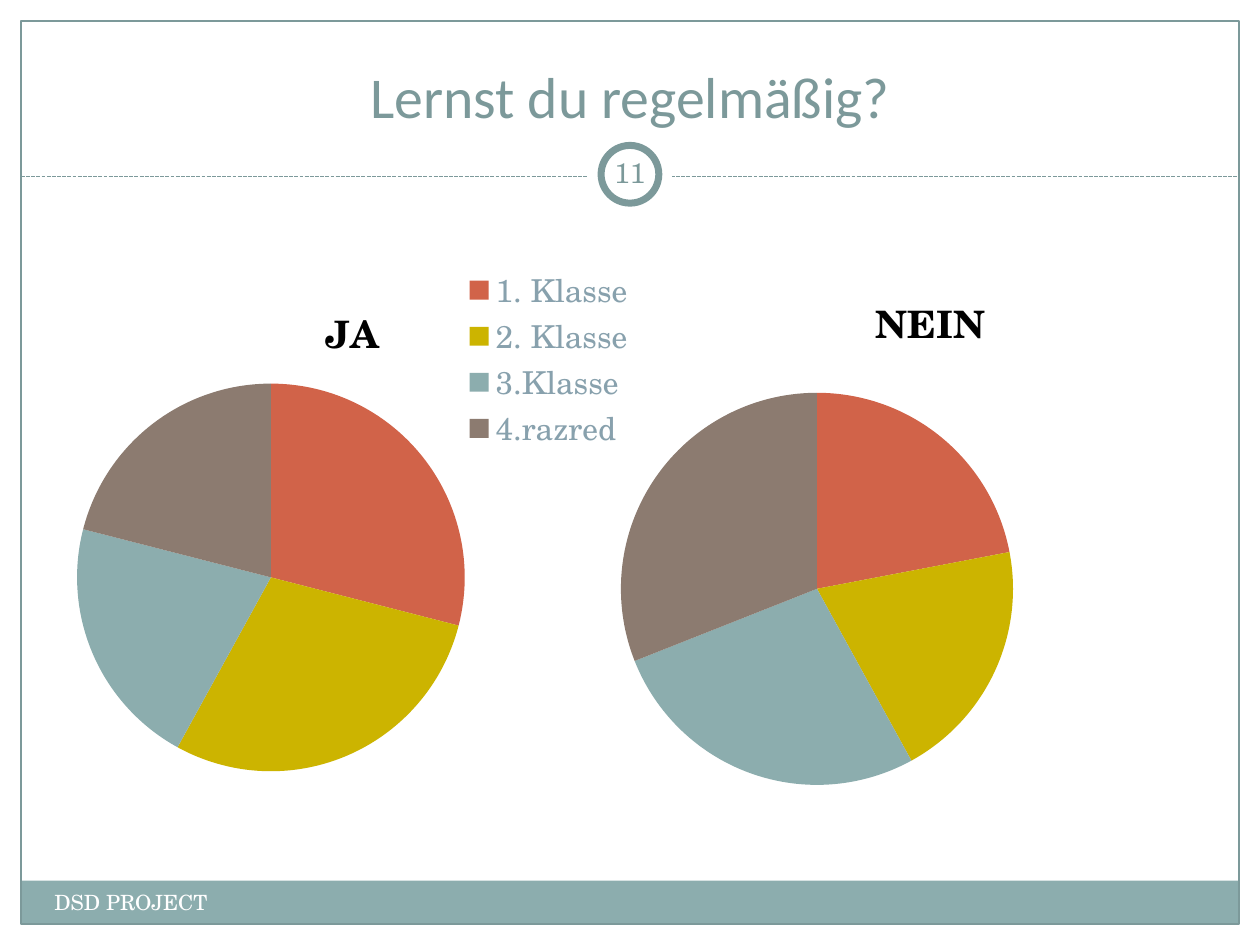
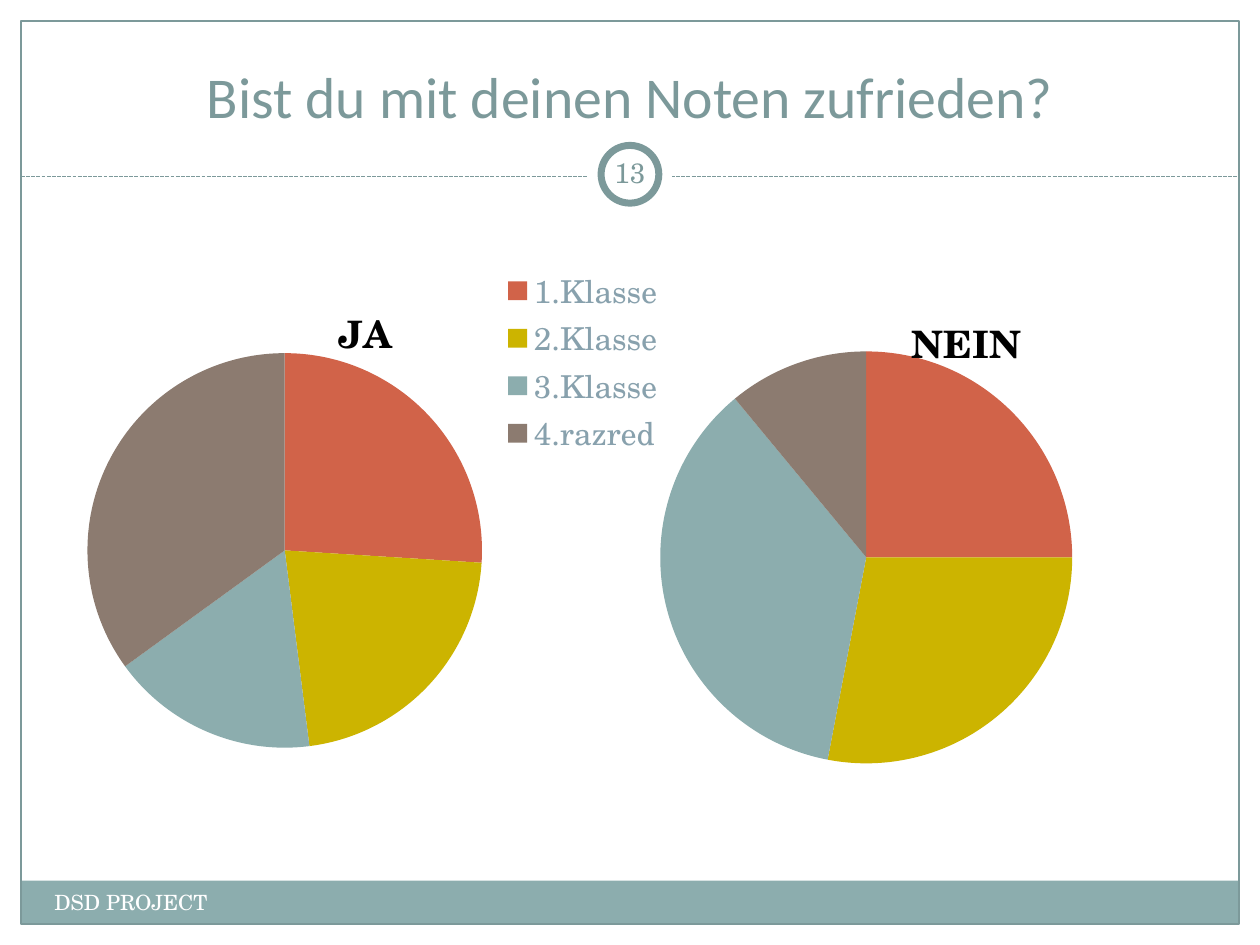
from dataclasses import dataclass
from lxml.etree import SubElement
from pptx import Presentation
from pptx.chart.data import CategoryChartData
from pptx.dml.color import RGBColor
from pptx.enum.chart import XL_CHART_TYPE, XL_LEGEND_POSITION
from pptx.enum.dml import MSO_LINE
from pptx.enum.shapes import MSO_CONNECTOR, MSO_SHAPE
from pptx.enum.text import MSO_ANCHOR, PP_ALIGN
from pptx.oxml.ns import qn
from pptx.util import Pt


@dataclass(frozen=True)
class Theme:
    white: str = "FFFFFF"
    black: str = "000000"
    dark: str = "7C999A"
    band: str = "8CADAE"
    key: str = "88A1AD"
    slices: tuple = ("D16349", "CCB400", "8CADAE", "8C7B70")
    head: str = "Calibri"
    body: str = "TeX Gyre Schola"
    title: float = 33
    note: float = 12
    number: float = 16
    chart: float = 18
    label: float = 21.6


THEME = Theme()
WIDE = 720
HIGH = 540
EDGE = 12
RULE = 100.8
LABEL_TOP = 21
LABELS = {"JA": 31, "NEIN": 63}

SLIDES = [
    {"title": "Lernst du regelmäßig?", "number": "11", "pies": [
        {"name": "NEIN", "box": (348.5, 140.4, 359.3, 319.7),
         "plot": (0.017, 0.263, 0.625, 0.701),
         "cats": ("1", "2", "3", "4"), "vals": (22, 20, 27, 31)},
        {"name": "JA", "box": (28.1, 146.2, 339.8, 319.7),
         "plot": (0.047, 0.228, 0.652, 0.694),
         "cats": ("1. Klasse", "2. Klasse", "3.Klasse", "4.razred"),
         "vals": (29, 29, 21, 21), "legend": (0.69, 0.02, 0.3, 0.33)},
    ]},
    {"title": "Bist du mit deinen Noten zufrieden?", "number": "13", "pies": [
        {"name": "JA", "box": (17.3, 146.2, 375.8, 295.9),
         "plot": (0.087, 0.188, 0.6, 0.762),
         "cats": ("1.Klasse", "2.Klasse", "3.Klasse", "4.razred"),
         "vals": (26, 22, 17, 35), "legend": (0.69, 0.02, 0.3, 0.37)},
        {"name": "NEIN", "box": (377.3, 151.9, 342.7, 284.4),
         "plot": (0, 0.172, 0.687, 0.828),
         "cats": ("1", "2", "3", "4"), "vals": (25, 28, 36, 11)},
    ]},
]


def points(box):
    return [Pt(size) for size in box]


def style(font, face, size, color, bold=False):
    for name, value in {"name": face, "size": Pt(size), "bold": bold}.items():
        setattr(font, name, value)
    font.color.rgb = RGBColor.from_string(color)


def write(frame, text, face, size, color, align=PP_ALIGN.LEFT, **form):
    frame.text = text
    for name, value in {"word_wrap": True, **form}.items():
        setattr(frame, name, value)
    para = frame.paragraphs[0]
    para.alignment = align
    style(para.runs[0].font, face, size, color)


def shape(slide, kind, box, fill=None, line=None, width=0.75):
    item = slide.shapes.add_shape(kind, *points(box))
    item.shadow.inherit = False
    if fill:
        item.fill.solid()
        item.fill.fore_color.rgb = RGBColor.from_string(fill)
    else:
        item.fill.background()
    if line:
        item.line.color.rgb = RGBColor.from_string(line)
        item.line.width = Pt(width)
    else:
        item.line.fill.background()


def rule(slide):
    line = slide.shapes.add_connector(
        MSO_CONNECTOR.STRAIGHT, *points((EDGE, RULE, WIDE - EDGE, RULE)))
    line.line.color.rgb = RGBColor.from_string(THEME.dark)
    line.line.width = Pt(0.75)
    line.line.dash_style = MSO_LINE.SQUARE_DOT
    SubElement(line.element.spPr, qn("a:effectLst"))


def disc(slide, size, **look):
    box = ((WIDE - size) / 2, 99.6 - size / 2, size, size)
    shape(slide, MSO_SHAPE.OVAL, box, THEME.white, **look)


def text(slide, box, words, size, color, **form):
    frame = slide.shapes.add_textbox(*points(box)).text_frame
    write(frame, words, THEME.body, size, color, **form)


def base(slide, title, number):
    """Draw the frame, footer, title and number badge shared by all slides."""
    shape(slide, MSO_SHAPE.RECTANGLE, (EDGE, 503.3, WIDE - 2 * EDGE, 24.5),
          THEME.band)
    shape(slide, MSO_SHAPE.RECTANGLE,
          (EDGE, EDGE, WIDE - 2 * EDGE, HIGH - 2 * EDGE), line=THEME.dark)
    rule(slide)
    disc(slide, 48)
    disc(slide, 33, line=THEME.dark, width=4)

    head = slide.shapes.title
    spots = ("left", "top", "width", "height")
    for name, value in zip(spots, points((24, 18, 672, 60))):
        setattr(head, name, value)
    write(head.text_frame, title, THEME.head, THEME.title, THEME.dark,
          PP_ALIGN.CENTER, vertical_anchor=MSO_ANCHOR.BOTTOM)
    text(slide, (24, 504.7, 282, 28.8), "DSD PROJECT", THEME.note, THEME.white)
    pads = {f"margin_{side}": Pt(3.6)
            for side in ("left", "top", "right", "bottom")}
    text(slide, (342, 81.4, 36, 34.6), number, THEME.number, THEME.dark,
         align=PP_ALIGN.CENTER, vertical_anchor=MSO_ANCHOR.MIDDLE, **pads)


def place(chart, tag, index, spot):
    """Fix a chart part at (x, y) or (x, y, w, h), as shares of the chart."""
    node = chart.element.find(".//" + qn(tag))
    for old in node.findall(qn("c:layout")):
        node.remove(old)
    layout = SubElement(node, qn("c:layout"))
    node.insert(index, layout)
    manual = SubElement(layout, qn("c:manualLayout"))
    rules = {"layoutTarget": "inner"} if tag == "c:plotArea" else {}
    rules |= {"xMode": "edge", "yMode": "edge"}
    rules |= dict(zip("xywh", spot))
    for name, value in rules.items():
        SubElement(manual, qn("c:" + name)).set("val", str(value))


def pie(slide, name, box, plot, cats, vals, legend=None):
    data = CategoryChartData()
    data.categories = cats
    data.add_series(name, vals)
    chart = slide.shapes.add_chart(
        XL_CHART_TYPE.PIE, *points(box), data).chart
    style(chart.font, THEME.body, THEME.chart, THEME.black)
    chart.plots[0].vary_by_categories = True
    for index, color in enumerate(THEME.slices):
        look = chart.series[0].points[index].format
        look.fill.solid()
        look.fill.fore_color.rgb = RGBColor.from_string(color)
        look.line.fill.background()

    chart.has_title = True
    frame = chart.chart_title.text_frame
    frame.text = name
    style(frame.paragraphs[0].runs[0].font, THEME.body, THEME.label,
          THEME.black, bold=True)
    wide, high = box[2:]
    left = round(0.5 - LABELS[name] / 2 / wide, 3)
    place(chart, "c:title", 1, (left, round(LABEL_TOP / high, 3)))
    place(chart, "c:plotArea", 0, plot)

    chart.has_legend = legend is not None
    if legend:
        chart.legend.position = XL_LEGEND_POSITION.RIGHT
        chart.legend.include_in_layout = False
        style(chart.legend.font, THEME.body, THEME.chart, THEME.key)
        place(chart, "c:legend", 1, legend)


def main():
    deck = Presentation()
    deck.slide_width, deck.slide_height = Pt(WIDE), Pt(HIGH)
    for page in SLIDES:
        slide = deck.slides.add_slide(deck.slide_layouts[5])
        base(slide, page["title"], page["number"])
        for item in page["pies"]:
            pie(slide, **item)
    deck.save("out.pptx")


if __name__ == "__main__":
    main()
